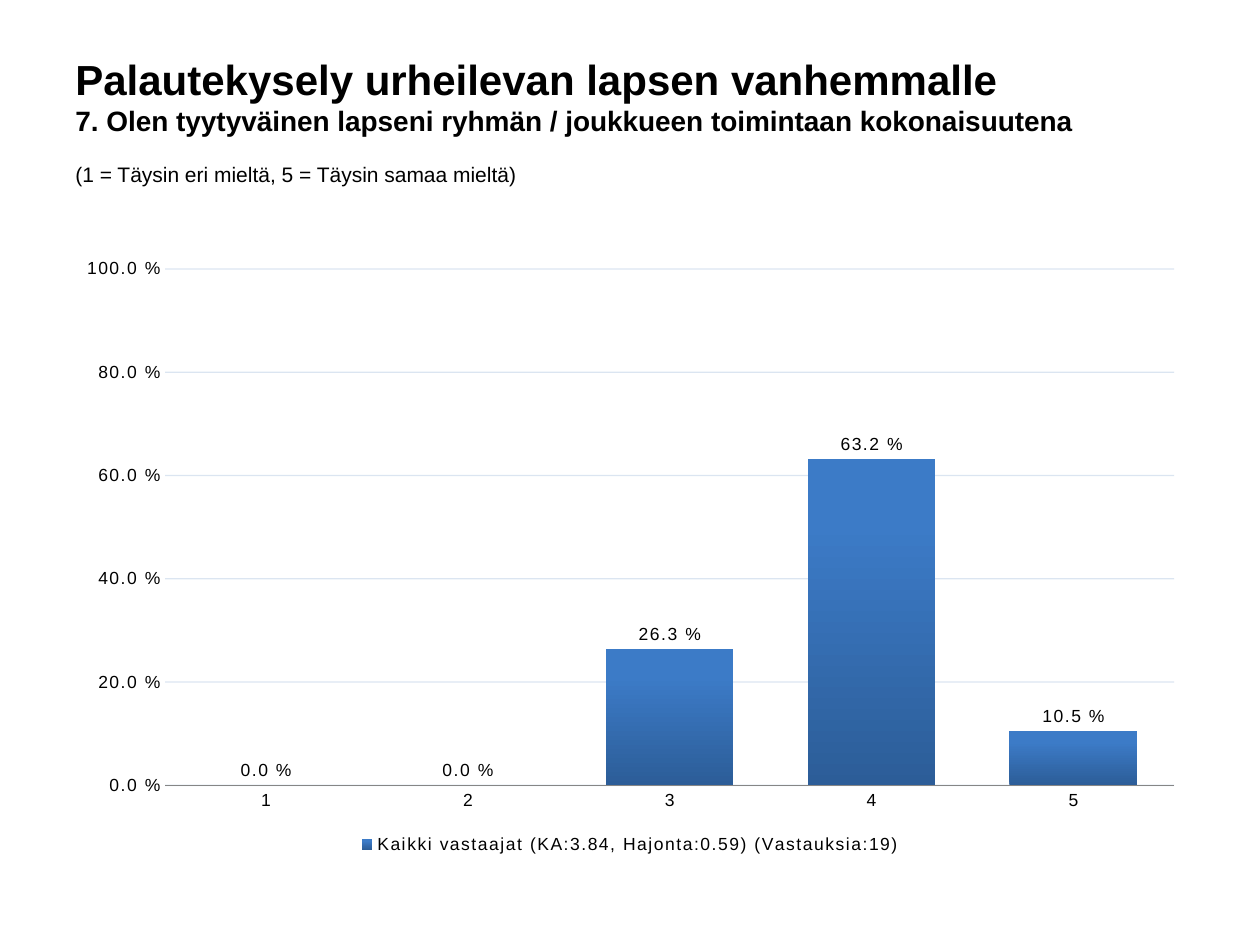
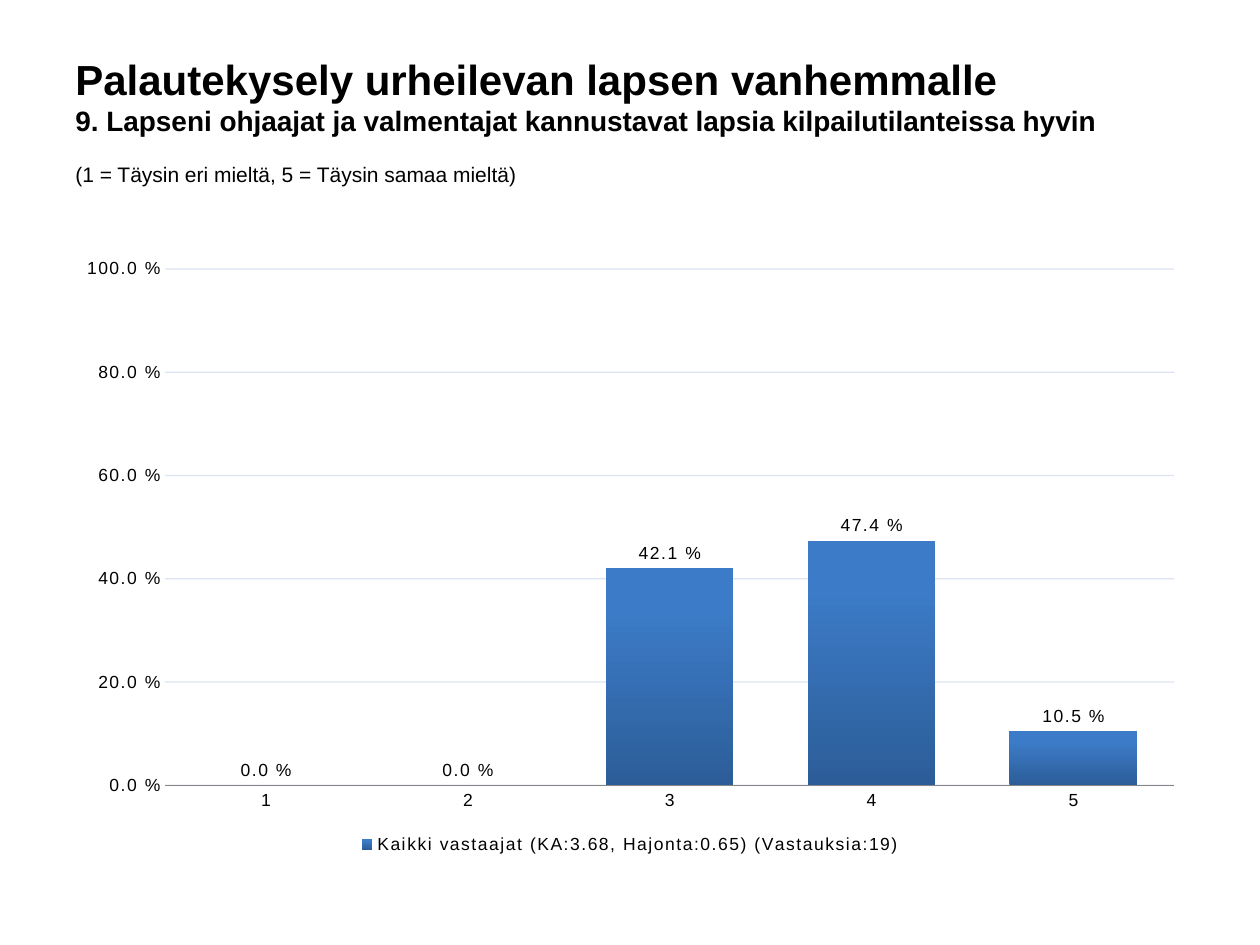
"""Build the survey slides, one column chart for each question."""
from dataclasses import dataclass

from lxml.etree import SubElement
from pptx import Presentation
from pptx.chart.data import CategoryChartData as Data
from pptx.dml.color import RGBColor as Rgb
from pptx.enum.chart import XL_CHART_TYPE as Kind
from pptx.enum.chart import XL_LABEL_POSITION as Spot
from pptx.enum.chart import XL_LEGEND_POSITION as Side
from pptx.enum.chart import XL_TICK_MARK as Tick
from pptx.enum.text import MSO_ANCHOR as Anchor
from pptx.oxml import parse_xml
from pptx.oxml.ns import nsdecls, qn
from pptx.util import Pt

SCALE = 9144
FONT = "Arial"
INK, AXIS, GRID = "000000", "868686", "4F81BD"
DARK, LIGHT = "2C5D98", "3C7BC7"
PERCENT = "0.0\\ %"
HEAD = "Palautekysely urheilevan lapsen vanhemmalle"
NOTE = "(1 = Täysin eri mieltä, 5 = Täysin samaa mieltä)"
GRADES = ("1", "2", "3", "4", "5")


@dataclass(frozen=True)
class Box:
    left: int
    top: int
    width: int
    height: int

    def emu(self) -> tuple:
        return tuple(n * SCALE for n in (self.left, self.top, self.width, self.height))


@dataclass(frozen=True)
class Query:
    title: str
    label: str
    shares: tuple


TITLE = Box(50, 36, 900, 79)
BODY = Box(50, 123, 900, 59)
CHART = Box(50, 194, 900, 488)
PLOT = {"x": 0.09, "y": 0.04, "w": 0.89, "h": 0.84}

QUERIES = (
    Query("7. Olen tyytyväinen lapseni ryhmän / joukkueen toimintaan kokonaisuutena",
          "Kaikki vastaajat (KA:3.84, Hajonta:0.59) (Vastauksia:19)",
          (0, 0, 0.263, 0.632, 0.105)),
    Query("9. Lapseni ohjaajat ja valmentajat kannustavat lapsia kilpailutilanteissa hyvin",
          "Kaikki vastaajat (KA:3.68, Hajonta:0.65) (Vastauksia:19)",
          (0, 0, 0.421, 0.474, 0.105)),
)


def paint(color, code: str) -> None:
    color.rgb = Rgb.from_string(code)


def style(font, size: int, bold: bool = False) -> None:
    font.name, font.size, font.bold = FONT, Pt(size), bold
    paint(font.color, INK)


def write(slide, box: Box, *lines: tuple, bold: bool = False,
          anchor=Anchor.TOP, before: float = 0) -> None:
    frame = slide.shapes.add_textbox(*box.emu()).text_frame
    frame.word_wrap, frame.vertical_anchor = True, anchor
    for n, (text, size) in enumerate(lines):
        para = frame.add_paragraph() if n else frame.paragraphs[0]
        para.space_before = Pt(before)
        run = para.add_run()
        run.text = text
        style(run.font, size, bold)


def place(chart) -> None:
    area = chart.element.find(".//" + qn("c:plotArea"))
    for old in area.findall(qn("c:layout")):
        area.remove(old)
    layout = parse_xml(f"<c:layout {nsdecls('c')}><c:manualLayout/></c:layout>")
    parts = {"layoutTarget": "inner", "xMode": "edge", "yMode": "edge", **PLOT}
    for tag, val in parts.items():
        SubElement(layout[0], qn("c:" + tag)).set("val", str(val))
    area.insert(0, layout)


def rule(axes) -> None:
    rows, cats = axes
    for axis in axes:
        axis.major_tick_mark = axis.minor_tick_mark = Tick.NONE
    paint(cats.format.line.color, AXIS)
    cats.format.line.width = Pt(0.75)
    rows.minimum_scale, rows.maximum_scale, rows.major_unit = 0, 1, 0.2
    rows.format.line.fill.background()
    rows.tick_labels.number_format = PERCENT
    rows.tick_labels.number_format_is_linked = False
    grid = rows.major_gridlines.format.line
    paint(grid.color, GRID)
    grid.width = Pt(0.75)
    tint = rows.major_gridlines.format.line.fill.fore_color
    paint(tint, GRID)
    code = chart_color(rows)
    SubElement(code, qn("a:alpha")).set("val", "20000")


def chart_color(axis):
    return axis.element_grid if hasattr(axis, "element_grid") else \
        axis.major_gridlines.element.find(
            qn("c:majorGridlines") + "//" + qn("a:srgbClr")) \
        if axis.major_gridlines.element.tag != qn("c:majorGridlines") else \
        axis.major_gridlines.element.find(".//" + qn("a:srgbClr"))


def plot(slide, query: Query) -> None:
    data = Data(number_format=PERCENT)
    data.categories = GRADES
    data.add_series(query.label, query.shares)
    chart = slide.shapes.add_chart(Kind.COLUMN_CLUSTERED, *CHART.emu(), data).chart
    chart.has_title = False
    chart.has_legend = True
    chart.legend.position = Side.BOTTOM
    chart.legend.include_in_layout = False
    bars = chart.plots[0]
    bars.gap_width, bars.vary_by_categories = 58, False
    bars.has_data_labels = True
    tags = bars.data_labels
    tags.show_value, tags.position = True, Spot.OUTSIDE_END
    tags.number_format, tags.number_format_is_linked = PERCENT, False
    fill = bars.series[0].format.fill
    fill.gradient()
    fill.gradient_angle = 90
    for stop, code, at in zip(fill.gradient_stops, (DARK, LIGHT), (0, 0.8)):
        paint(stop.color, code)
        stop.position = at
    rows, cats = chart.value_axis, chart.category_axis
    rule((rows, cats))
    for part in (chart, chart.legend, tags, rows.tick_labels, cats.tick_labels):
        style(part.font, 10)
    for props in chart.element.iter(qn("a:defRPr")):
        props.set("spc", "100")
    place(chart)


def main() -> None:
    deck = Presentation()
    deck.slide_width, deck.slide_height = 1000 * SCALE, 750 * SCALE
    for query in QUERIES:
        slide = deck.slides.add_slide(deck.slide_layouts[6])
        write(slide, TITLE, (HEAD, 24), (query.title, 16), bold=True, anchor=Anchor.MIDDLE)
        write(slide, BODY, (NOTE, 12), before=2.4)
        plot(slide, query)
    deck.save("out.pptx")


if __name__ == "__main__":
    main()
